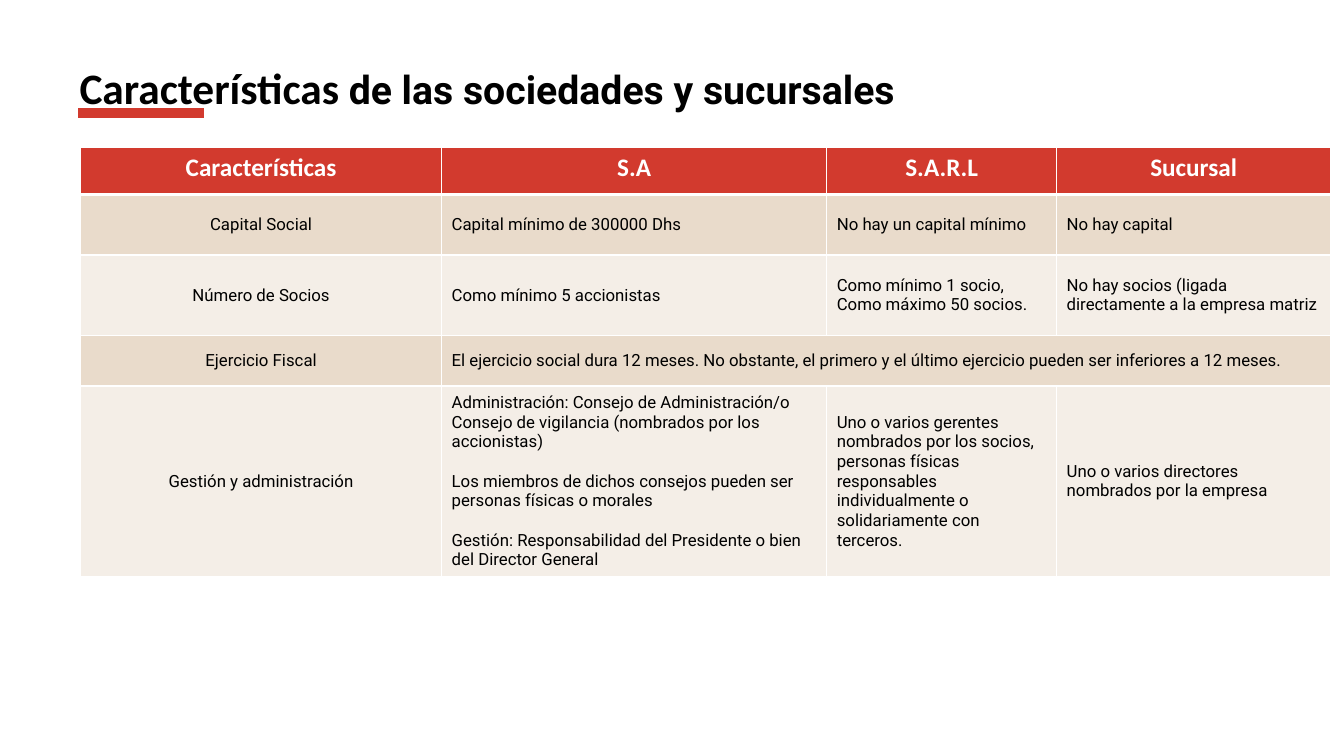
from lxml.etree import SubElement
from pptx import Presentation
from pptx.dml.color import RGBColor
from pptx.enum.shapes import MSO_SHAPE
from pptx.enum.text import MSO_ANCHOR, PP_ALIGN
from pptx.oxml.ns import qn
from pptx.util import Inches, Pt

RED, WHITE, BLACK = "D23A2E", "FFFFFF", "000000"
BANDS = ["F4EEE7", "E9DBCB"]
COLUMN_WIDTHS = [3.58, 3.82, 2.28, 2.72]
ROW_HEIGHTS = [0.47, 0.6, 0.8, 0.5, 1.86]
FEATURES = [
    ["Características", "S.A", "S.A.R.L", "Sucursal"],
    ["Capital Social", "Capital mínimo de 300000 Dhs", "No hay un capital mínimo", "No hay capital"],
    ["Número de Socios", "Como mínimo 5 accionistas",
     "Como mínimo 1 socio,\nComo máximo 50 socios.",
     "No hay socios (ligada directamente a la empresa matriz"],
    ["Ejercicio Fiscal",
     "El ejercicio social dura 12 meses. No obstante, el primero y el último "
     "ejercicio pueden ser inferiores a 12 meses.", "", ""],
    ["Gestión y administración",
     "Administración: Consejo de Administración/o Consejo de vigilancia (nombrados por los accionistas)\n"
     "Los miembros de dichos consejos pueden ser personas físicas o morales\n"
     "Gestión: Responsabilidad del Presidente o bien del Director General",
     "Uno o varios gerentes nombrados por los socios, personas físicas responsables "
     "individualmente o solidariamente con terceros.",
     "Uno o varios directores nombrados por la empresa"],
]


def color(code):
    return RGBColor.from_string(code)


class SlideBuilder:
    title_start = {"name": "Calibri", "size": Pt(31), "bold": True}
    title_rest = {"name": "Roboto", "size": Pt(28), "bold": True}
    header = {"name": "Calibri", "size": Pt(18), "bold": True}
    body = {"name": "Roboto", "size": Pt(12), "bold": False}

    def __init__(self, slide):
        self.slide = slide

    def run(self, paragraph, text, style, code):
        run = paragraph.add_run()
        run.text = text
        for attribute, value in style.items():
            setattr(run.font, attribute, value)
        run.font.color.rgb = color(code)

    def title(self, parts, left, top, width, height):
        box = self.slide.shapes.add_textbox(Inches(left), Inches(top), Inches(width), Inches(height))
        box.text_frame.word_wrap = True
        for text, style in parts:
            self.run(box.text_frame.paragraphs[0], text, style, BLACK)

    def bar(self, left, top, width, height):
        bar = self.slide.shapes.add_shape(
            MSO_SHAPE.RECTANGLE, Inches(left), Inches(top), Inches(width), Inches(height))
        bar.shadow.inherit = False
        bar.fill.solid()
        bar.fill.fore_color.rgb = color(RED)
        bar.line.color.rgb = color(WHITE)
        bar.line.width = Pt(2)

    def borders(self, cell, widths):
        properties = cell._tc.get_or_add_tcPr()
        for position, (side, width) in enumerate(widths.items()):
            border = SubElement(properties, qn(f"a:ln{side}"), w=str(Pt(width)))
            fill = SubElement(border, qn("a:solidFill"))
            SubElement(fill, qn("a:srgbClr"), val=WHITE)
            properties.insert(position, border)

    def cell(self, cell, text, row, column, gap):
        is_header = row == 0
        cell.fill.solid()
        cell.fill.fore_color.rgb = color(RED if is_header else BANDS[row % 2])
        cell.vertical_anchor = MSO_ANCHOR.TOP if is_header else MSO_ANCHOR.MIDDLE
        self.borders(cell, {"L": 1, "R": 1, "T": 3 if row == 1 else 1, "B": 3 if is_header else 1})
        if not text:
            return
        for index, line in enumerate(text.split("\n")):
            paragraph = cell.text_frame.add_paragraph() if index else cell.text_frame.paragraphs[0]
            paragraph.alignment = PP_ALIGN.CENTER if is_header or column == 0 else PP_ALIGN.LEFT
            if index and gap:
                paragraph.space_before = Pt(gap)
            self.run(paragraph, line, self.header if is_header else self.body,
                     WHITE if is_header else BLACK)

    def table(self, rows, left, top, widths, heights, spanned_row, spaced_row):
        table = self.slide.shapes.add_table(
            len(rows), len(widths), Inches(left), Inches(top),
            Inches(sum(widths)), Inches(sum(heights))).table
        table.first_row = table.horz_banding = False
        for column, width in zip(table.columns, widths):
            column.width = Inches(width)
        for row, height in zip(table.rows, heights):
            row.height = Inches(height)
        table.cell(spanned_row, 1).merge(table.cell(spanned_row, len(widths) - 1))
        for row, texts in enumerate(rows):
            for column, text in enumerate(texts):
                self.cell(table.cell(row, column), text, row, column, 14 if row == spaced_row else 0)


def main():
    presentation = Presentation()
    presentation.slide_width, presentation.slide_height = Inches(13.33), Inches(7.5)
    builder = SlideBuilder(presentation.slides.add_slide(presentation.slide_layouts[6]))
    builder.title([("Características", builder.title_start),
                   (" de las sociedades y sucursales", builder.title_rest)], 0.69, 0.56, 11.91, 1.2)
    builder.table(FEATURES, 0.8, 1.46, COLUMN_WIDTHS, ROW_HEIGHTS, spanned_row=3, spaced_row=4)
    builder.bar(0.76, 1.06, 1.28, 0.13)
    presentation.save("out.pptx")


if __name__ == "__main__":
    main()
